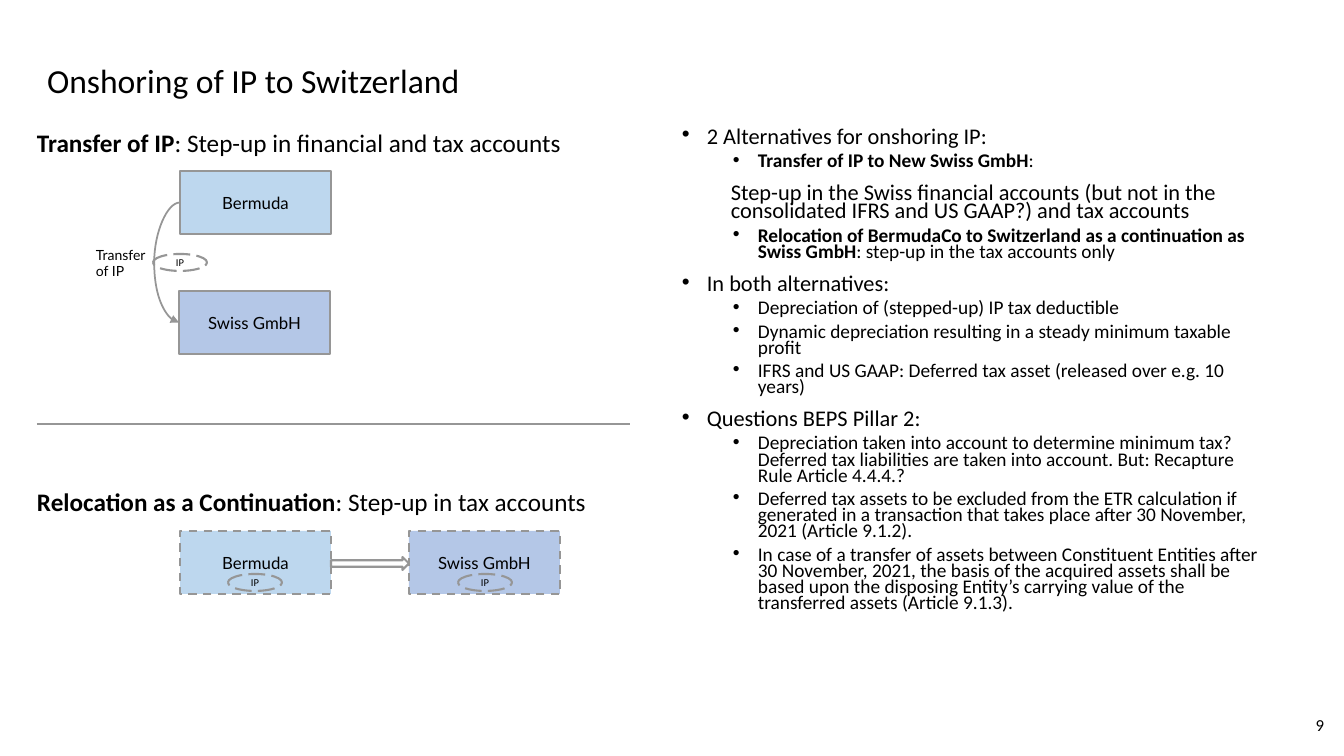
from dataclasses import dataclass

import lxml.etree
import pptx
import pptx.dml.color
import pptx.enum.dml
import pptx.enum.shapes
import pptx.enum.text
import pptx.oxml.ns
import pptx.util

SHAPE = pptx.enum.shapes.MSO_SHAPE
CONNECTOR = pptx.enum.shapes.MSO_CONNECTOR
DASH = pptx.enum.dml.MSO_LINE
ALIGN = pptx.enum.text.PP_ALIGN
ANCHOR = pptx.enum.text.MSO_ANCHOR


@dataclass(frozen=True)
class Theme:
    ink: str = "000000"
    grey: str = "969696"
    bermuda: str = "BDD7EE"
    swiss: str = "B4C7E7"
    font: str = "Calibri"
    diagram_font: str = "Lato"
    title: float = 24
    heading: float = 18
    point: float = 16
    detail: float = 13.8
    entity: float = 12
    label: float = 10
    ip: float = 7.5


THEME = Theme()

# Content: runs are (text, bold)
TITLE = "Onshoring of IP to Switzerland"
PAGE = "9"
HEADINGS = [
    (127, [("Transfer of IP", True), (": Step-up in financial and tax accounts", False)]),
    (486, [("Relocation as a Continuation", True), (": Step-up in tax accounts", False)]),
]
ENTITIES = [  # name, left, top, fill, dash
    ("Bermuda", 180, 171, THEME.bermuda, None),
    ("Swiss GmbH", 179, 291, THEME.swiss, None),
    ("Bermuda", 180, 531, THEME.bermuda, DASH.DASH),
    ("Swiss GmbH", 409, 531, THEME.swiss, DASH.DASH),
]
IP_MARKS = [(153, 254), (228, 574), (458, 574)]
POINTS = [  # kind, runs
    ("point", [("2 Alternatives for onshoring IP:", False)]),
    ("detail", [("Transfer of IP to New Swiss GmbH", True), (":", False)]),
    ("plain", [("Step-up in the Swiss financial accounts (but not in the consolidated "
                "IFRS and US GAAP?) and tax accounts", False)]),
    ("detail", [("Relocation of BermudaCo to Switzerland as a continuation as Swiss GmbH", True),
                (": step-up in the tax accounts only", False)]),
    ("point", [("In both alternatives:", False)]),
    ("detail", [("Depreciation of (stepped-up) IP tax deductible", False)]),
    ("detail", [("Dynamic depreciation resulting in a steady minimum taxable profit", False)]),
    ("detail", [("IFRS and US GAAP: Deferred tax asset (released over e.g. 10 years)", False)]),
    ("point", [("Questions BEPS Pillar 2:", False)]),
    ("detail", [("Depreciation taken into account to determine minimum tax? Deferred tax "
                 "liabilities are taken into account. But: Recapture Rule Article 4.4.4.?", False)]),
    ("detail", [("Deferred tax assets to be excluded from the ETR calculation if generated in a "
                 "transaction that takes place after 30 November, 2021 (Article 9.1.2).", False)]),
    ("detail", [("In case of a transfer of assets between Constituent Entities after 30 November, "
                 "2021, the basis of the acquired assets shall be based upon the disposing Entity’s "
                 "carrying value of the transferred assets (Article 9.1.3).", False)]),
]
POINT_STYLES = {
    "point": dict(size=THEME.point, before=10, margin=25, hanging=25),
    "detail": dict(size=THEME.detail, before=5, margin=76, hanging=25, level=1),
    "plain": dict(size=THEME.point, before=10, margin=49),
}
ENTITY_W, ENTITY_H = 151, 63
IP_W, IP_H = 54, 17


def px(length):
    return round(length * 914400 / 100.8)


def box(*lengths):
    return [px(length) for length in lengths]


def rgb(colour):
    return pptx.dml.color.RGBColor.from_string(colour)


def write(paragraph, text, size=THEME.entity, font=THEME.font, align=ALIGN.LEFT,
          spacing=None, before=0, margin=0, hanging=0, level=0):
    """Fill a paragraph with a string or a list of (text, bold) runs."""
    paragraph.alignment = align
    paragraph.level = level
    paragraph.space_before = pptx.util.Pt(before)
    if spacing:
        paragraph.line_spacing = spacing
    properties = paragraph._p.get_or_add_pPr()
    properties.set("marL", str(px(margin)))
    properties.set("indent", str(-px(hanging)))
    if hanging:
        bullet_font = lxml.etree.SubElement(properties, pptx.oxml.ns.qn("a:buFont"))
        bullet_font.set("typeface", "Arial")
        bullet = lxml.etree.SubElement(properties, pptx.oxml.ns.qn("a:buChar"))
        bullet.set("char", "•")
    for words, bold in ([(text, False)] if isinstance(text, str) else text):
        run = paragraph.add_run()
        run.text = words
        run.font.size = pptx.util.Pt(size)
        run.font.name = font
        run.font.bold = bold
        run.font.color.rgb = rgb(THEME.ink)


def set_frame(shape, anchor=ANCHOR.TOP, inset=None):
    frame = shape.text_frame
    frame.word_wrap = True
    frame.auto_size = pptx.enum.text.MSO_AUTO_SIZE.NONE
    frame.vertical_anchor = anchor
    if inset is not None:
        frame.margin_left = frame.margin_right = inset
        frame.margin_top = frame.margin_bottom = inset
    return frame


def add_text(slide, place, paragraphs, anchor=ANCHOR.TOP, inset=None):
    """Add a text box from (text, format) pairs."""
    frame = set_frame(slide.shapes.add_textbox(*box(*place)), anchor, inset)
    for number, (text, style) in enumerate(paragraphs):
        write(frame.add_paragraph() if number else frame.paragraphs[0], text, **style)


def set_line(line, width, dash=None):
    line.color.rgb = rgb(THEME.grey)
    line.width = pptx.util.Pt(width)
    if dash:
        line.dash_style = dash


def add_outline(slide, kind, place, fill=None, dash=None, text="", **style):
    shape = slide.shapes.add_shape(kind, *box(*place))
    shape.shadow.inherit = False
    if fill:
        shape.fill.solid()
        shape.fill.fore_color.rgb = rgb(fill)
    else:
        shape.fill.background()
    set_line(shape.line, 1.5, dash)
    if text:
        frame = set_frame(shape, ANCHOR.MIDDLE, 0)
        write(frame.paragraphs[0], text, align=ALIGN.CENTER, **style)


def add_connector(slide, kind, ends, width):
    connector = slide.shapes.add_connector(kind, *box(*ends))
    set_line(connector.line, width)
    lxml.etree.SubElement(connector._element.spPr, pptx.oxml.ns.qn("a:effectLst"))
    return connector


def add_transfer_curve(slide, start, end, bulge_x):
    curve = add_connector(slide, CONNECTOR.CURVE, (*start, *end), 1.25)
    geometry = curve._element.spPr.find(pptx.oxml.ns.qn("a:prstGeom"))
    adjustments = geometry.find(pptx.oxml.ns.qn("a:avLst"))
    share = (bulge_x - start[0]) / (end[0] - start[0])
    guide = lxml.etree.SubElement(adjustments, pptx.oxml.ns.qn("a:gd"))
    guide.set("name", "adj1")
    guide.set("fmla", f"val {round(share * 100000)}")
    head = lxml.etree.SubElement(curve.line._get_or_add_ln(), pptx.oxml.ns.qn("a:tailEnd"))
    head.set("type", "triangle")


def main():
    deck = pptx.Presentation()
    deck.slide_width, deck.slide_height = box(1344, 756)
    slide = deck.slides.add_slide(deck.slide_layouts[5])

    # Title
    title = slide.shapes.title
    title.left, title.top, title.width, title.height = box(37, 57, 1032, 51)
    frame = set_frame(title, ANCHOR.MIDDLE)
    write(frame.paragraphs[0], TITLE, size=THEME.title, spacing=0.9)

    # Alternatives and questions
    add_text(slide, (672, 124, 603, 575),
             [(runs, dict(POINT_STYLES[kind], spacing=0.7)) for kind, runs in POINTS])

    # Entities, transfer and relocation
    for name, left, top, fill, dash in ENTITIES:
        add_outline(slide, SHAPE.RECTANGLE, (left, top, ENTITY_W, ENTITY_H), fill, dash,
                    name, font=THEME.diagram_font)
    giver, taker = [(left, top + ENTITY_H / 2) for _, left, top, _, _ in ENTITIES[:2]]
    add_transfer_curve(slide, giver, taker, 154)
    label = dict(size=THEME.label, font=THEME.diagram_font)
    add_text(slide, (96, 246, 56, 34), [("Transfer", label), ("of IP", label)], inset=0)
    for left, top in IP_MARKS:
        add_outline(slide, SHAPE.OVAL, (left, top, IP_W, IP_H), dash=DASH.LONG_DASH,
                    text="IP", size=THEME.ip)
    add_outline(slide, SHAPE.RIGHT_ARROW, (331, 557, 78, 13))

    # Headings, divider and page number
    for top, runs in HEADINGS:
        add_text(slide, (37, top, 610, 30), [(runs, dict(size=THEME.heading))], inset=0)
    add_connector(slide, CONNECTOR.STRAIGHT, (37, 424, 630, 424), 1)
    add_text(slide, (1032, 705, 302, 40), [(PAGE, dict(align=ALIGN.RIGHT))], ANCHOR.MIDDLE)

    deck.save("out.pptx")


if __name__ == "__main__":
    main()
